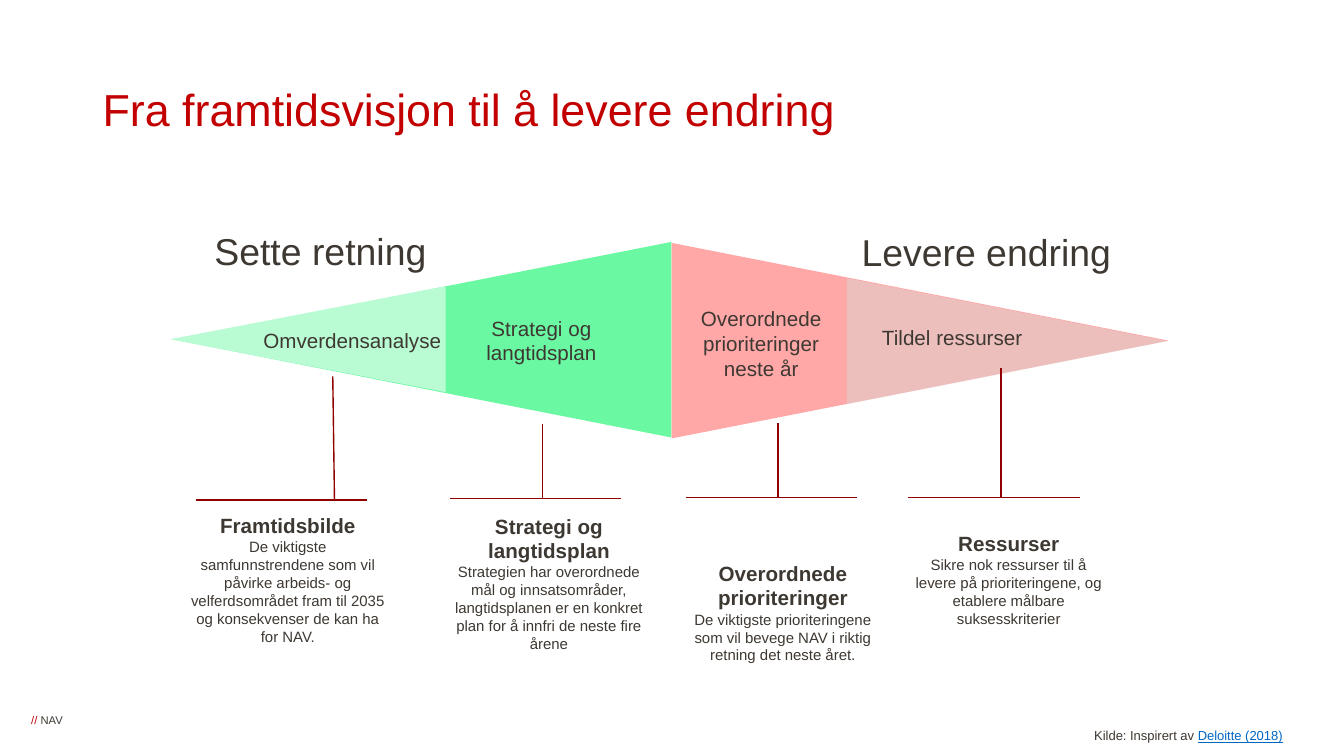
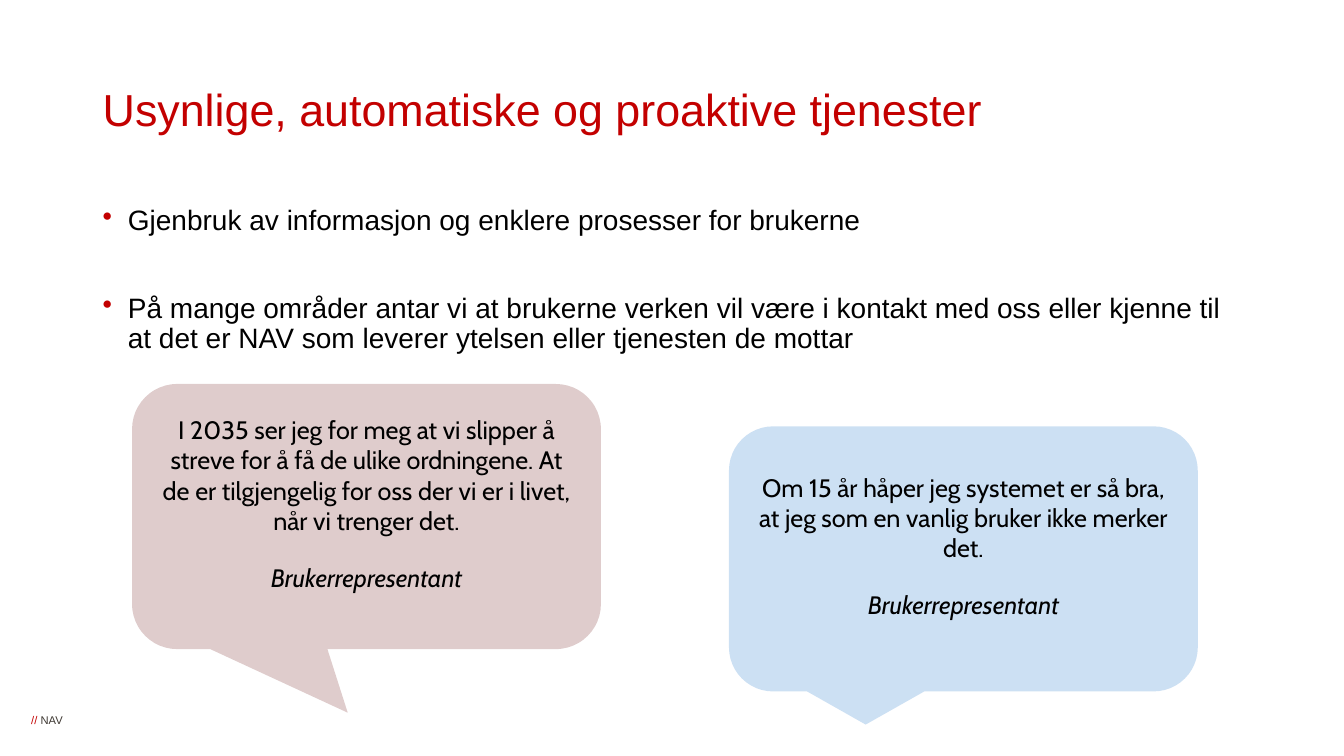
"""Builds two slides on strategy and future services."""
from lxml import etree
from pptx import Presentation
from pptx import util as u
from pptx.dml import color as dml
from pptx.enum import shapes, text
from pptx.oxml import ns

RED, INK, BLACK, MAROON, BLUE = "C30000", "3E3832", "000000", "900000", "0067C5"
LEFT, CENTER, RIGHT = text.PP_ALIGN.LEFT, text.PP_ALIGN.CENTER, text.PP_ALIGN.RIGHT
TOP, MIDDLE = text.MSO_ANCHOR.TOP, text.MSO_ANCHOR.MIDDLE
PRESET = shapes.MSO_SHAPE


def rgb(value):
    """Return a colour from a hex string."""
    return dml.RGBColor.from_string(value)


def add_span(para, words, size=14.7, color=INK, font="Arial", bold=False, italic=False, underline=False):
    """Append formatted text to a paragraph."""
    span = para.add_run()
    span.text = words
    face = span.font
    face.name, face.size, face.color.rgb = font, u.Pt(size), rgb(color)
    face.bold, face.italic, face.underline = bold, italic, underline


def add_para(frame, words, align=CENTER, before=0, spacing=None, bullet=False, **style):
    """Append a formatted paragraph to a frame, using the empty first one if free."""
    para = frame.paragraphs[0] if not frame.paragraphs[0].runs else frame.add_paragraph()
    para.alignment = align
    if before:
        para.space_before = u.Pt(before)
    if spacing:
        para.line_spacing = spacing
    if bullet:
        add_bullet(para)
    add_span(para, words, **style)
    return para


def add_bullet(para):
    """Give a paragraph a red bullet and a hanging indent."""
    props = para._p.get_or_add_pPr()
    props.set("marL", str(u.Inches(0.25)))
    props.set("indent", str(-u.Inches(0.25)))
    tint = etree.SubElement(props, ns.qn("a:buClr"))
    etree.SubElement(tint, ns.qn("a:srgbClr")).set("val", RED)
    etree.SubElement(props, ns.qn("a:buChar")).set("char", "•")


def add_box(page, left, top, width, height, anchor=MIDDLE, inset=True):
    """Add a wrapping text box and return its frame."""
    box = page.shapes.add_textbox(*map(u.Inches, (left, top, width, height)))
    frame = box.text_frame
    frame.word_wrap, frame.vertical_anchor = True, anchor
    if not inset:
        frame.margin_left = frame.margin_right = frame.margin_top = frame.margin_bottom = 0
    return frame


def add_figure(page, preset, left, top, width, height, fill=None, opacity=100, line=None, rotation=0):
    """Add a preset shape with flat fill and line."""
    figure = page.shapes.add_shape(preset, *map(u.Inches, (left, top, width, height)))
    figure.shadow.inherit = False
    figure.rotation = rotation
    if fill:
        figure.fill.solid()
        figure.fill.fore_color.rgb = rgb(fill)
        if opacity < 100:
            tint = figure.fill._xPr.find(".//" + ns.qn("a:srgbClr"))
            etree.SubElement(tint, ns.qn("a:alpha")).set("val", str(opacity * 1000))
    else:
        figure.fill.background()
    if line:
        figure.line.color.rgb, figure.line.width = rgb(line), u.Pt(1)
    else:
        figure.line.fill.background()
    return figure


def add_sideways(page, preset, left, top, width, height, rotation, **look):
    """Add a quarter-turned shape, placed by the area it covers once turned."""
    shift = (width - height) / 2
    return add_figure(page, preset, left + shift, top - shift, height, width, rotation=rotation, **look)


def add_marker(page, left, top, adjustments):
    """Add a horizontal bar with a leader line up to the diamond."""
    marker = add_sideways(page, PRESET.LINE_CALLOUT_1_ACCENT_BAR, left, top, 1.7, 0.5, 90, line=MAROON)
    for index, value in enumerate(adjustments):
        marker.adjustments[index] = value


def add_label(page, left, top, width, *lines, size=14.7):
    """Add a centred label, one paragraph a line."""
    frame = add_box(page, left, top, width, 0.73, inset=False)
    for line in lines:
        add_para(frame, line, size=size)


def add_caption(page, left, top, height, heading, body):
    """Add a bold heading with an explanation below."""
    frame = add_box(page, left, top, 1.93, height, inset=False)
    add_para(frame, heading, bold=True)
    add_para(frame, body, size=10.7)


def add_speech(page, left, top, fill, quote, tail=()):
    """Add a speech bubble with a quote and its speaker."""
    bubble = add_figure(page, PRESET.ROUNDED_RECTANGULAR_CALLOUT, left, top, 4.65, 2.63, fill, 20)
    for index, value in enumerate(tail):
        bubble.adjustments[index] = value
    frame = bubble.text_frame
    frame.word_wrap, frame.vertical_anchor = True, MIDDLE
    frame.margin_bottom = u.Inches(0.31)
    style = dict(size=18, color=BLACK, font="Cabin")
    add_para(frame, quote, **style)
    add_para(frame, "Brukerrepresentant", before=19, italic=True, **style)


def add_page(deck, title):
    """Add a blank slide with the shared title and footer."""
    page = deck.slides.add_slide(deck.slide_layouts[6])
    add_para(add_box(page, 0.92, 0.53, 11.5, 1.17), title, LEFT, spacing=0.9, size=32, color=RED)
    footer = add_box(page, 0.31, 7.08, 0.39, 0.13, TOP, inset=False)
    para = add_para(footer, "// ", LEFT, size=8, color=RED)
    add_span(para, "NAV", size=8)
    return page


def build_vision(deck):
    """Build the slide with the diamond from vision to change."""
    page = add_page(deck, "Fra framtidsvisjon til å levere endring")
    for left, top, width, height, rotation, fill, opacity in (
        (1.73, 2.4, 4.93, 1.94, 270, "2CF67C", 70),
        (6.66, 2.41, 4.93, 1.94, 90, "FFA8A7", 100),
        (1.69, 2.84, 2.73, 1.05, 270, "B9FCD3", 100),
        (8.4, 2.76, 3.18, 1.25, 90, "DBD7D3", 50),
    ):
        add_sideways(page, PRESET.ISOSCELES_TRIANGLE, left, top, width, height, rotation,
                     fill=fill, opacity=opacity)

    add_label(page, 2.53, 3.01, 1.93, "Omverdensanalyse")
    add_label(page, 4.56, 3.01, 1.62, "Strategi og langtidsplan")
    add_label(page, 6.67, 3.04, 1.76, "Overordnede prioriteringer", "neste år")
    add_label(page, 8.48, 2.98, 1.93, "Tildel ressurser")
    add_label(page, 1.94, 2.12, 2.48, "Sette retning", size=26.7)
    add_label(page, 8.3, 2.13, 2.97, "Levere endring", size=26.7)

    add_marker(page, 1.94, 5, (0.19, -0.08, 0.2, -2.53))
    add_marker(page, 4.46, 5.04, (0.46, -0.19, 0.46, -1.66))
    add_marker(page, 6.8, 5.03, (0.46, -0.19, 0.46, -1.66))
    add_marker(page, 9.01, 5.03, (0.46, -0.19, 0.46, -2.76))

    add_caption(page, 1.89, 5.38, 0.73, "Framtidsbilde",
                "De viktigste samfunnstrendene som vil påvirke arbeids- og velferdsområdet "
                "fram til 2035 og konsekvenser de kan ha for NAV.")
    add_caption(page, 4.48, 5.38, 0.81, "Strategi og langtidsplan",
                "Strategien har overordnede mål og innsatsområder, langtidsplanen er en "
                "konkret plan for å innfri de neste fire årene")
    add_caption(page, 6.8, 5.61, 0.93, "Overordnede prioriteringer",
                "De viktigste prioriteringene som vil bevege NAV i riktig retning det neste året.")
    add_caption(page, 9.04, 5.38, 0.73, "Ressurser",
                "Sikre nok ressurser til å levere på prioriteringene, og etablere målbare "
                "suksesskriterier")

    citation = add_para(add_box(page, 9.72, 7.17, 3.1, 0.26, TOP), "Kilde: Inspirert av ", RIGHT, size=9.3)
    add_span(citation, "Deloitte (2018)", size=9.3, color=BLUE, underline=True)


def build_services(deck):
    """Build the slide with bullets and user quotes."""
    page = add_page(deck, "Usynlige, automatiske og proaktive tjenester")
    body = add_box(page, 0.92, 2, 11.5, 2.59, TOP)
    style = dict(align=LEFT, spacing=0.9, bullet=True, size=20, color=BLACK)
    add_para(body, "Gjenbruk av informasjon og enklere prosesser for brukerne", **style)
    add_para(body, "På mange områder antar vi at brukerne verken vil være i kontakt med oss eller "
             "kjenne til at det er NAV som leverer ytelsen eller tjenesten de mottar", before=41, **style)
    add_speech(page, 7.23, 4.23, BLUE,
               "Om 15 år håper jeg systemet er så bra, at jeg som en vanlig bruker ikke merker det.")
    add_speech(page, 1.31, 3.81, "620000",
               "I 2035 ser jeg for meg at vi slipper å streve for å få de ulike ordningene. "
               "At de er tilgjengelig for oss der vi er i livet, når vi trenger det.", (-0.04, 0.74, 0.17))


def main():
    """Build and save the deck."""
    deck = Presentation()
    deck.slide_width, deck.slide_height = u.Inches(13.33), u.Inches(7.5)
    build_vision(deck)
    build_services(deck)
    deck.save("out.pptx")


if __name__ == "__main__":
    main()
